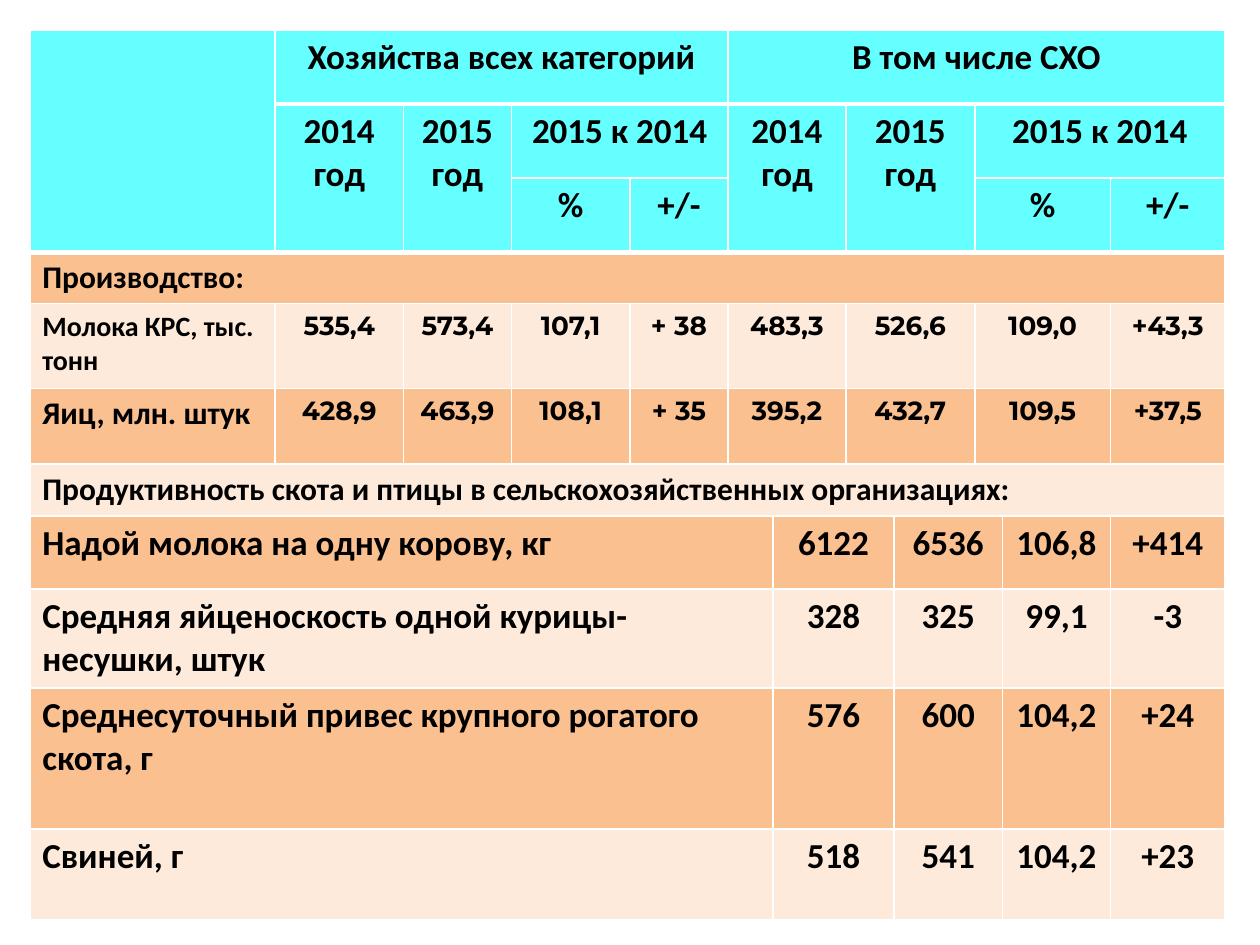
from lxml.etree import SubElement
from pptx import Presentation
from pptx.dml.color import RGBColor
from pptx.enum.text import PP_ALIGN
from pptx.oxml.ns import qn
from pptx.util import Cm, Pt

CYAN = RGBColor(0x66, 0xFF, 0xFF)
ORANGE = RGBColor(0xFA, 0xC0, 0x90)
PEACH = RGBColor(0xFD, 0xEA, 0xDA)
BLACK = RGBColor(0, 0, 0)
WHITE = RGBColor(0xFF, 0xFF, 0xFF)

# Relative column widths and row heights
COLS = [4.95, 2.59, 2.18, 2.39, 1.98, 0.91, 1.47, 0.97, 1.63, 0.56, 2.18, 2.31]
ROWS = [1.5, 1.5, 1.5, 1.02, 1.72, 1.52, 1.05, 1.48, 2, 2.85, 1.83]

# Header cells: row, column, row span, column span, text
HEAD = [
    (0, 0, 3, 1, ""),
    (0, 1, 1, 4, "Хозяйства всех категорий"),
    (0, 5, 1, 7, "В том числе СХО"),
    (1, 1, 2, 1, "2014 год"),
    (1, 2, 2, 1, "2015 год"),
    (1, 3, 1, 2, "2015 к 2014"),
    (1, 5, 2, 2, "2014 год"),
    (1, 7, 2, 2, "2015 год"),
    (1, 9, 1, 3, "2015 к 2014"),
    (2, 3, 1, 1, "%"),
    (2, 4, 1, 1, "+/-"),
    (2, 9, 1, 2, "%"),
    (2, 11, 1, 1, "+/-"),
]

# Column spans of each kind of body row
TITLE = [12]
OUTPUT = [1, 1, 1, 1, 1, 2, 2, 2, 1]
YIELD = [6, 2, 2, 1, 1]

# Body rows: spans, label size, value size, value font, texts
BODY = [
    (TITLE, 18, 18, "Calibri", ["Производство:"]),
    (OUTPUT, 16, 15, "Montserrat",
     ["Молока КРС, тыс. тонн", "535,4", "573,4", "107,1", "+ 38",
      "483,3", "526,6", "109,0", "+43,3"]),
    (OUTPUT, 18, 15, "Montserrat",
     ["Яиц, млн. штук", "428,9", "463,9", "108,1", "+ 35",
      "395,2", "432,7", "109,5", "+37,5"]),
    (TITLE, 18, 18, "Calibri",
     ["Продуктивность скота и птицы в сельскохозяйственных организациях:"]),
    (YIELD, 20, 20, "Calibri",
     ["Надой молока на одну корову, кг", "6122", "6536", "106,8", "+414"]),
    (YIELD, 20, 20, "Calibri",
     ["Средняя яйценоскость одной курицы-несушки, штук",
      "328", "325", "99,1", "-3"]),
    (YIELD, 20, 20, "Calibri",
     ["Среднесуточный привес крупного рогатого скота, г",
      "576", "600", "104,2", "+24"]),
    (YIELD, 20, 20, "Calibri", ["Свиней, г", "518", "541", "104,2", "+23"]),
]


def edge(cell, top, bottom):
    """Draw white borders; they must come before the cell fill."""
    props = cell._tc.get_or_add_tcPr()
    for tag, width in (("a:lnL", 1), ("a:lnR", 1), ("a:lnT", top), ("a:lnB", bottom)):
        line = SubElement(props, qn(tag), w=str(Pt(width)))
        fill = SubElement(line, qn("a:solidFill"))
        SubElement(fill, qn("a:srgbClr"), val=str(WHITE))


def put(grid, row, col, high, wide, text, color, size, font="Calibri", mid=True):
    """Merge, fill and write one cell."""
    cell = grid.cell(row, col)
    if high * wide > 1:
        cell.merge(grid.cell(row + high - 1, col + wide - 1))
    for r in range(row, row + high):
        for c in range(col, col + wide):
            part = grid.cell(r, c)
            # Heavy rules: under the group titles and under the whole header
            top = 3 if r == 3 or (r == 1 and c > 0) else 1
            bottom = 3 if r == 2 or (r == 0 and c > 0) else 1
            edge(part, top, bottom)
            part.fill.solid()
            part.fill.fore_color.rgb = color
    cell.text_frame.text = text
    para = cell.text_frame.paragraphs[0]
    para.alignment = PP_ALIGN.CENTER if mid else PP_ALIGN.LEFT
    for run in para.runs:
        run.font.size = Pt(size)
        run.font.name = font
        run.font.bold = True
        run.font.color.rgb = BLACK


def fill_head(grid):
    for row, col, high, wide, text in HEAD:
        put(grid, row, col, high, wide, text, CYAN, 20)


def fill_body(grid, start):
    for i, (spans, big, small, font, texts) in enumerate(BODY):
        color = PEACH if i % 2 else ORANGE
        col = 0
        for wide, text in zip(spans, texts):
            label = col == 0
            put(grid, start + i, col, 1, wide, text, color,
                big if label else small, "Calibri" if label else font, not label)
            col += wide


def add_grid(slide, x, y, w, h):
    """Livestock table stretched to the given box."""
    grid = slide.shapes.add_table(len(ROWS), len(COLS), x, y, w, h).table
    for col, part in zip(grid.columns, COLS):
        col.width = int(w * part / sum(COLS))
    for row, part in zip(grid.rows, ROWS):
        row.height = int(h * part / sum(ROWS))
    fill_head(grid)
    fill_body(grid, 3)


def main():
    deck = Presentation()
    deck.slide_width, deck.slide_height = Cm(25.4), Cm(19.05)
    slide = deck.slides.add_slide(deck.slide_layouts[6])
    add_grid(slide, Cm(0.6), Cm(0.6), Cm(24.1), Cm(17.93))
    deck.save("out.pptx")


if __name__ == "__main__":
    main()
